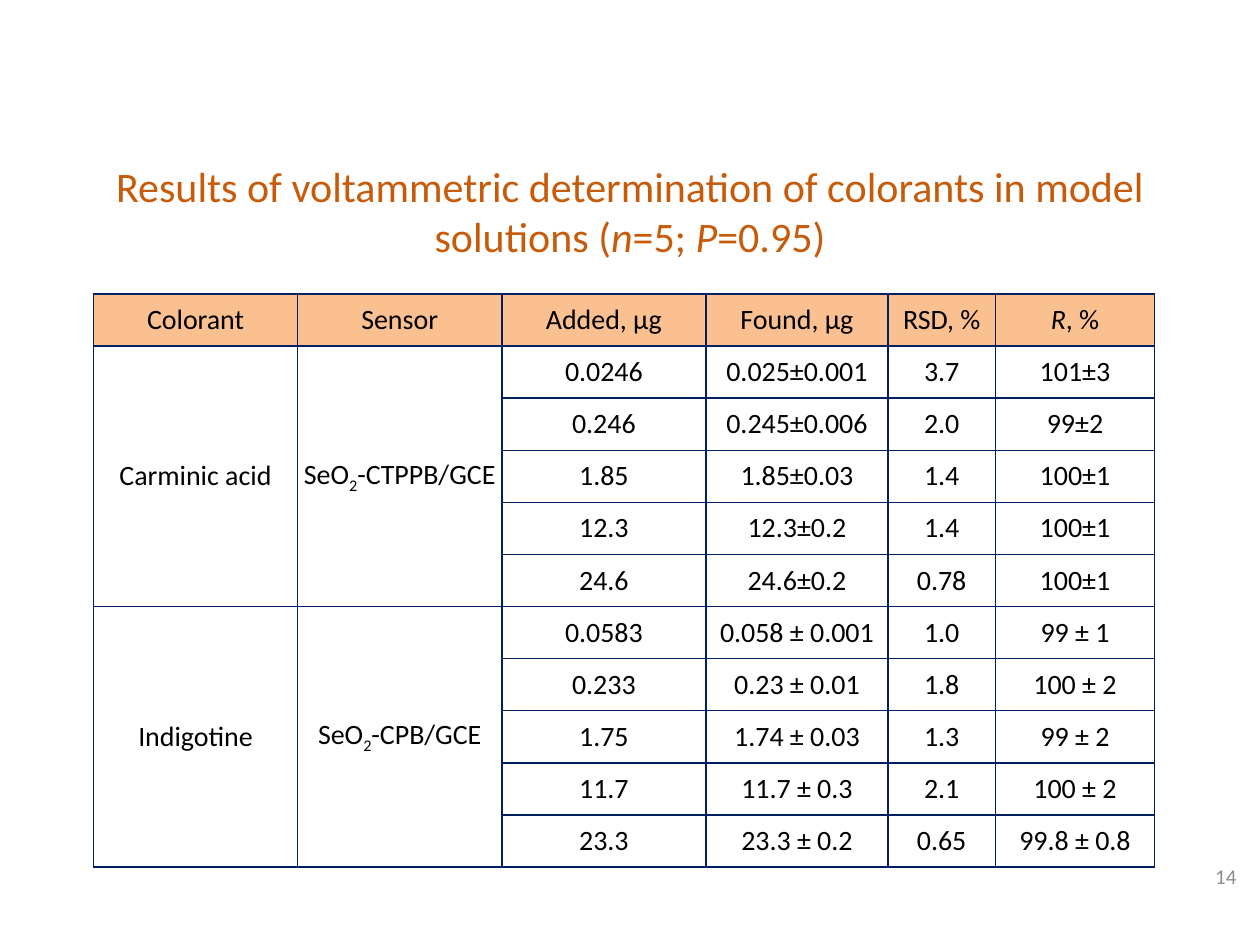
import pptx
import pptx.util
import pptx.dml.color
import pptx.enum.text
import pptx.oxml
import pptx.oxml.ns

Pt = pptx.util.Pt
Align = pptx.enum.text.PP_ALIGN
Anchor = pptx.enum.text.MSO_ANCHOR

# Content: a text is a list of runs, each (words, style)
TITLE = [("Results of voltammetric determination of colorants in model solutions (", ""),
         ("n", "italic"), ("=5; ", ""), ("P", "italic"), ("=0.95)", "")]
PAGE = "14"
HEAD = ["Colorant", "Sensor", "Added, µg", "Found, µg", "RSD, %",
        [("R", "italic"), (", %", "")]]
GROUPS = [
    {"name": "Carminic acid",
     "sensor": [("SeО", ""), ("2", "sub"), ("-CTPPB/GCE", "")],
     "inset": (5, 3),
     "rows": [("0.0246", "0.025±0.001", "3.7", "101±3"),
              ("0.246", "0.245±0.006", "2.0", "99±2"),
              ("1.85", "1.85±0.03", "1.4", "100±1"),
              ("12.3", "12.3±0.2", "1.4", "100±1"),
              ("24.6", "24.6±0.2", "0.78", "100±1")]},
    {"name": "Indigotine",
     "sensor": [("SeО", ""), ("2", "sub"), ("-CPB/GCE", "")],
     "inset": (0, 0),
     "rows": [("0.0583", "0.058 ± 0.001", "1.0", "99 ± 1"),
              ("0.233", "0.23 ± 0.01", "1.8", "100 ± 2"),
              ("1.75", "1.74 ± 0.03", "1.3", "99 ± 2"),
              ("11.7", "11.7 ± 0.3", "2.1", "100 ± 2"),
              ("23.3", "23.3 ± 0.2", "0.65", "99.8 ± 0.8")]},
]
WIDTHS = [116.7, 116.7, 116.7, 104, 61.4, 91]
ROW_H = 29.78
COLORS = {"title": "C85B0A", "page": "8C8C8C", "text": "000000",
          "head": "FAC090", "cell": "FFFFFF", "line": "002060"}


def color(name):
    return pptx.dml.color.RGBColor.from_string(COLORS[name])


def write(frame, text, size=16, fill="text", align=Align.CENTER):
    para = frame.paragraphs[0]
    para.alignment = align
    for words, style in [(text, "")] if isinstance(text, str) else text:
        run = para.add_run()
        run.text = words
        font = run.font
        font.name, font.size, font.bold = "Calibri", Pt(size), False
        font.italic = style == "italic"
        font.color.rgb = color(fill)
        if style == "sub":
            font._element.set("baseline", "-25000")


def border(cell):
    props = cell._tc.get_or_add_tcPr()
    for place, side in enumerate("LRTB"):
        line = pptx.oxml.parse_xml(
            f'<a:ln{side} {pptx.oxml.ns.nsdecls("a")} w="{Pt(1)}"><a:solidFill>'
            f'<a:srgbClr val="{COLORS["line"]}"/></a:solidFill></a:ln{side}>')
        props.insert(place, line)


def put(cell, text, inset=(5, 3)):
    cell.vertical_anchor = Anchor.MIDDLE
    cell.margin_left = cell.margin_right = Pt(inset[0])
    cell.margin_top = cell.margin_bottom = Pt(inset[1])
    write(cell.text_frame, text)


deck = pptx.Presentation()
deck.slide_width, deck.slide_height = Pt(720), Pt(540)
slide = deck.slides.add_slide(deck.slide_layouts[5])

# Title
title = slide.shapes.title
title.left, title.top, title.width, title.height = Pt(45.4), Pt(77.8), Pt(629.2), Pt(85)
title.text_frame.auto_size = pptx.enum.text.MSO_AUTO_SIZE.NONE
title.text_frame.vertical_anchor = Anchor.MIDDLE
write(title.text_frame, TITLE, size=24, fill="title")

# Table grid
count = 1 + sum(len(group["rows"]) for group in GROUPS)
grid = slide.shapes.add_table(count, len(HEAD), Pt(53.4), Pt(168),
                              Pt(sum(WIDTHS)), Pt(ROW_H * count)).table
for col, width in zip(grid.columns, WIDTHS):
    col.width = Pt(width)
for index, row in enumerate(grid.rows):
    row.height = Pt(ROW_H)
    for cell in row.cells:
        cell.fill.solid()
        cell.fill.fore_color.rgb = color("cell" if index else "head")
        border(cell)

# Table text
for col, text in enumerate(HEAD):
    put(grid.cell(0, col), text)
top = 1
for group in GROUPS:
    end = top + len(group["rows"]) - 1
    for col, key in enumerate(("name", "sensor")):
        grid.cell(top, col).merge(grid.cell(end, col))
        put(grid.cell(top, col), group[key], inset=(1.4, 3.6))
    for row, values in enumerate(group["rows"], top):
        for col, value in enumerate(values, 2):
            put(grid.cell(row, col), value, inset=group["inset"])
    top = end + 1

# Page number
page = slide.shapes.add_textbox(Pt(545.8), Pt(486), Pt(167.8), Pt(28.8)).text_frame
page.word_wrap = True
page.vertical_anchor = Anchor.MIDDLE
write(page, PAGE, size=12, fill="page", align=Align.RIGHT)

deck.save("out.pptx")
